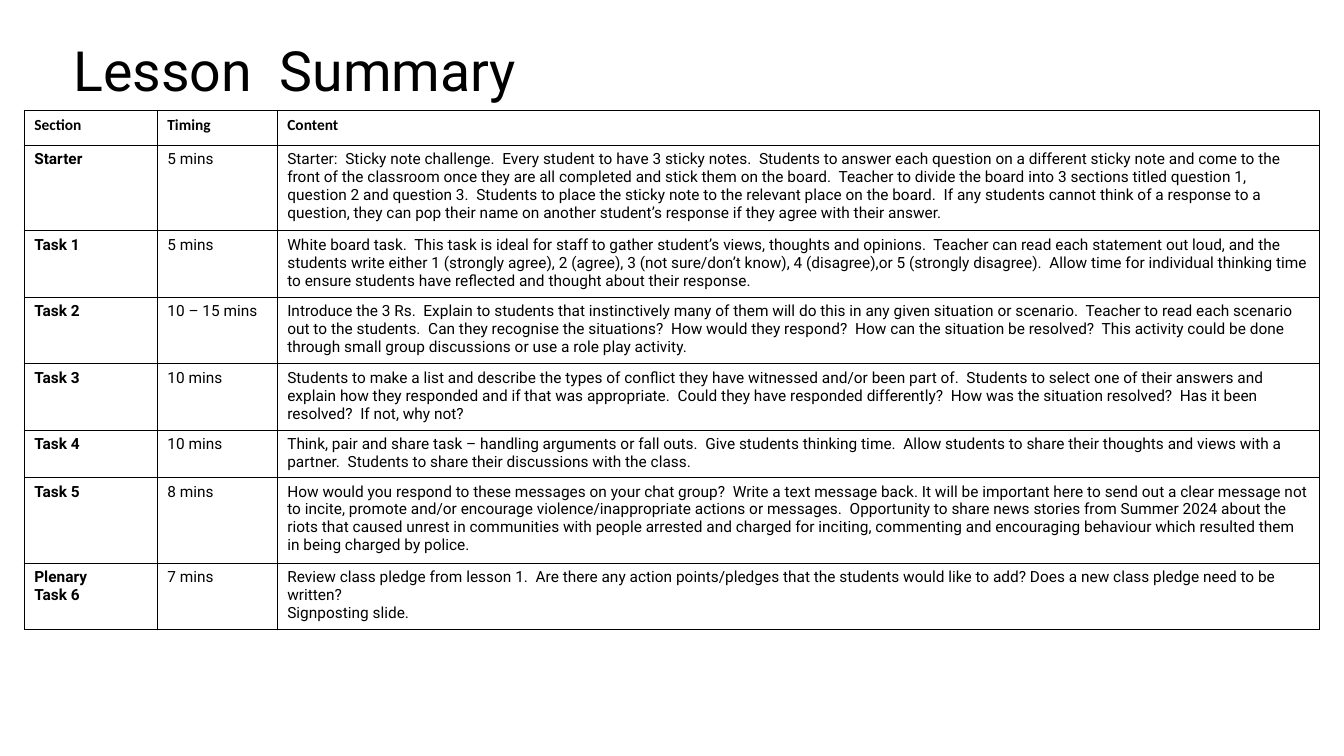
from dataclasses import dataclass

from lxml import etree
from pptx import Presentation
from pptx.dml.color import RGBColor
from pptx.enum.shapes import MSO_SHAPE as Shape
from pptx.enum.text import MSO_ANCHOR as Anchor, PP_ALIGN as Align
from pptx.oxml.ns import qn
from pptx.util import Pt

PX = 9144  # EMU in one px, 100 px to the inch


@dataclass(frozen=True)
class Theme:
    ink: str = "000000"
    paper: str = "FFFFFF"
    body: str = "Roboto"
    head: str = "Calibri"
    big: float = 39.6
    small: float = 11
    rule: float = 1
    edge: float = 0.75


class Page:
    def __init__(self, deck, theme):
        self.theme = theme
        self.slide = deck.slides.add_slide(deck.slide_layouts[6])

    def text(self, para, words, size, face, bold=False):
        run = para.add_run()
        run.text = words
        font = run.font
        font.size, font.name, font.bold = Pt(size), face, bold
        font.color.rgb = RGBColor.from_string(self.theme.ink)

    def title(self, words, *box):
        look = self.theme
        shape = self.slide.shapes.add_shape(Shape.RECTANGLE, *(n * PX for n in box))
        shape.shadow.inherit = False
        paper = RGBColor.from_string(look.paper)
        shape.fill.solid()
        shape.fill.fore_color.rgb = paper
        shape.line.color.rgb = paper
        shape.line.width = Pt(look.edge)
        frame = shape.text_frame
        frame.word_wrap = True
        frame.vertical_anchor = Anchor.MIDDLE
        para = frame.paragraphs[0]
        para.alignment = Align.LEFT
        para.line_spacing = 0.9
        self.text(para, words, look.big, look.body)

    def border(self, cell):
        """Rule all four sides of a cell; call before setting its fill."""
        props = cell._tc.get_or_add_tcPr()
        for side in ("a:lnL", "a:lnR", "a:lnT", "a:lnB"):
            line = etree.SubElement(props, qn(side), w=str(Pt(self.theme.rule)))
            fill = etree.SubElement(line, qn("a:solidFill"))
            etree.SubElement(fill, qn("a:srgbClr"), val=self.theme.ink)

    def table(self, rows, left, top, widths, heights):
        look = self.theme
        box = (left, top, sum(widths), sum(heights))
        grid = self.slide.shapes.add_table(
            len(rows), len(widths), *(n * PX for n in box)).table
        grid.first_row = grid.horz_banding = False
        for col, width in zip(grid.columns, widths):
            col.width = width * PX
        for r, (row, height) in enumerate(zip(rows, heights)):
            grid.rows[r].height = height * PX
            face = look.body if r else look.head
            for c, words in enumerate(row):
                cell = grid.cell(r, c)
                self.border(cell)
                cell.fill.background()
                frame = cell.text_frame
                for i, line in enumerate(words.split("\n")):
                    para = frame.add_paragraph() if i else frame.paragraphs[0]
                    self.text(para, line, look.small, face, r == 0 or c == 0)


PLAN = [
    ("Section", "Timing", "Content"),
    ("Starter", "5 mins",
     "Starter:  Sticky note challenge.  Every student to have 3 sticky notes.  "
     "Students to answer each question on a different sticky note and come to the "
     "front of the classroom once they are all completed and stick them on the "
     "board.  Teacher to divide the board into 3 sections titled question 1, "
     "question 2 and question 3.  Students to place the sticky note to the relevant "
     "place on the board.  If any students cannot think of a response to a "
     "question, they can pop their name on another student’s response if they "
     "agree with their answer."),
    ("Task 1", "5 mins",
     "White board task.  This task is ideal for staff to gather student’s views, "
     "thoughts and opinions.  Teacher can read each statement out loud, and the "
     "students write either 1 (strongly agree), 2 (agree), 3 (not sure/don’t "
     "know), 4 (disagree),or 5 (strongly disagree).  Allow time for individual "
     "thinking time to ensure students have reflected and thought about their "
     "response."),
    ("Task 2", "10 – 15 mins",
     "Introduce the 3 Rs.  Explain to students that instinctively many of them "
     "will do this in any given situation or scenario.  Teacher to read each "
     "scenario out to the students.  Can they recognise the situations?  How would "
     "they respond?  How can the situation be resolved?  This activity could be "
     "done through small group discussions or use a role play activity."),
    ("Task 3", "10 mins",
     "Students to make a list and describe the types of conflict they have "
     "witnessed and/or been part of.  Students to select one of their answers and "
     "explain how they responded and if that was appropriate.  Could they have "
     "responded differently?  How was the situation resolved?  Has it been "
     "resolved?  If not, why not?"),
    ("Task 4", "10 mins",
     "Think, pair and share task – handling arguments or fall outs.  Give students "
     "thinking time.  Allow students to share their thoughts and views with a "
     "partner.  Students to share their discussions with the class."),
    ("Task 5", "8 mins",
     "How would you respond to these messages on your chat group?  Write a text "
     "message back. It will be important here to send out a clear message not to "
     "incite, promote and/or encourage violence/inappropriate actions or "
     "messages.  Opportunity to share news stories from Summer 2024 about the "
     "riots that caused unrest in communities with people arrested and charged "
     "for inciting, commenting and encouraging behaviour which resulted them in "
     "being charged by police."),
    ("Plenary\nTask 6", "7 mins",
     "Review class pledge from lesson 1.  Are there any action points/pledges that "
     "the students would like to add? Does a new class pledge need to be written?\n"
     "Signposting slide."),
]


def main():
    deck = Presentation()
    deck.slide_width, deck.slide_height = 1333 * PX, 750 * PX
    page = Page(deck, Theme())
    page.title("Lesson  Summary", 63, 35, 476, 75)
    page.table(PLAN, 24, 110, (132, 119, 1034), (34, 85, 66, 66, 66, 47, 85, 66))
    deck.save("out.pptx")


if __name__ == "__main__":
    main()
